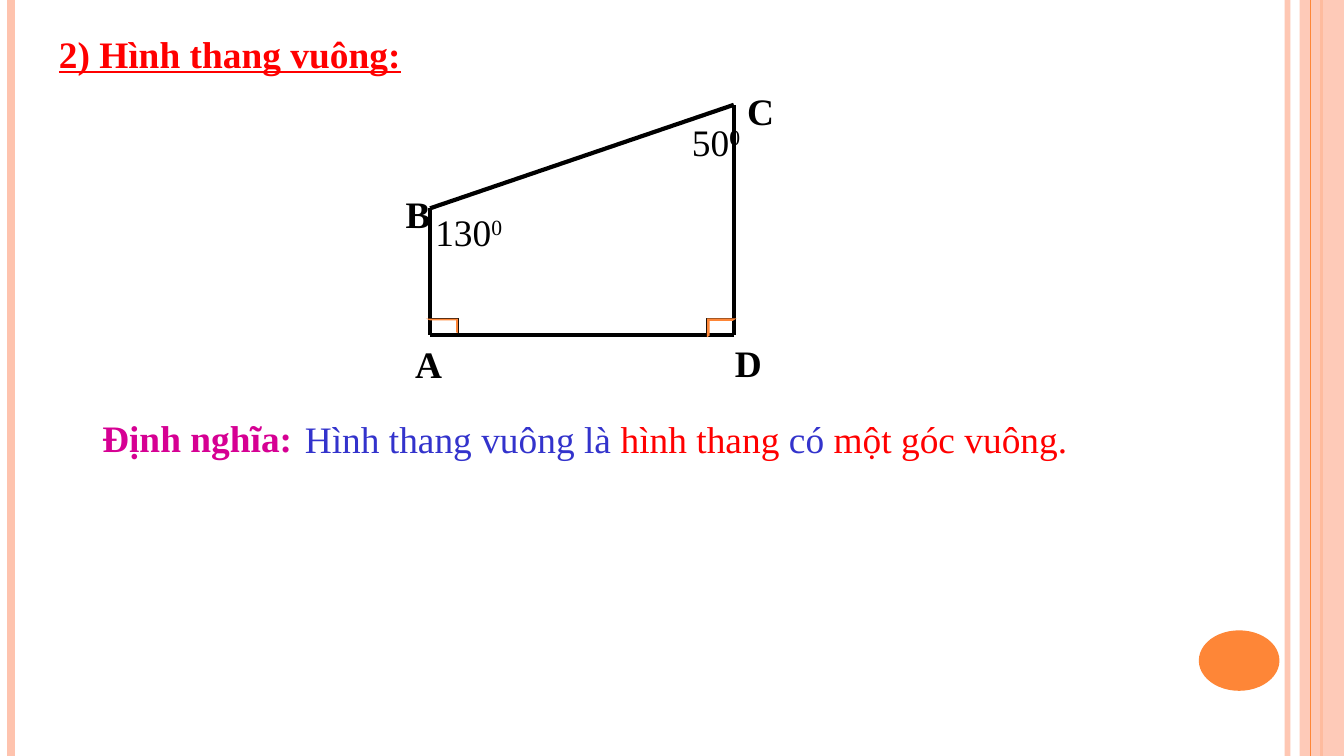
from dataclasses import dataclass, field
from lxml import etree
from pptx import Presentation
from pptx import util as u
from pptx.dml.color import RGBColor
from pptx.enum import shapes, text
from pptx.oxml import ns

FONT = "Times New Roman"
COLORS = {
    "black": "000000", "red": "FF0000", "blue": "3333CC", "magenta": "D60093",
    "orange": "FE8637", "peach": "FEC3AE",
}
WIDE = {"margin_left": u.Inches(0.1), "margin_right": u.Inches(0.1),
        "margin_top": u.Inches(0.05), "margin_bottom": u.Inches(0.05)}
TIGHT = {"margin_left": u.Inches(0.09), "margin_right": u.Inches(0.09),
         "margin_top": u.Inches(0.04), "margin_bottom": u.Inches(0.04)}


@dataclass
class Run:
    text: str
    color: str = "black"
    fmt: dict = field(default_factory=dict)
    superscript: bool = False


@dataclass
class Label:
    x: float
    y: float
    w: float
    h: float
    runs: list[Run]
    margins: dict = field(default_factory=lambda: WIDE)
    align: text.PP_ALIGN = text.PP_ALIGN.LEFT


@dataclass
class Line:
    start: tuple[float, float]
    end: tuple[float, float]
    color: str
    width: float
    alpha: int = 100


@dataclass
class Box:
    x: float
    y: float
    w: float
    h: float
    kind: shapes.MSO_SHAPE
    fill: str | None = None
    line: str | None = None
    alpha: int = 100
    adjust: tuple = ()
    flip: bool = False


def rgb(name: str) -> RGBColor:
    return RGBColor.from_string(COLORS[name])


def set_alpha(sp, percent: int) -> None:
    if percent < 100:
        clr = next(sp._element.spPr.iter(ns.qn("a:srgbClr")))
        etree.SubElement(clr, ns.qn("a:alpha"), val=str(percent * 1000))


def draw_line(s, line: Line) -> None:
    ends = [u.Inches(v) for v in (*line.start, *line.end)]
    c = s.shapes.add_connector(shapes.MSO_CONNECTOR.STRAIGHT, *ends)
    c.line.color.rgb = rgb(line.color)
    c.line.width = u.Pt(line.width)
    set_alpha(c, line.alpha)
    etree.SubElement(c._element.spPr, ns.qn("a:effectLst"))


def draw_box(s, box: Box) -> None:
    sp = s.shapes.add_shape(
        box.kind, *[u.Inches(v) for v in (box.x, box.y, box.w, box.h)])
    sp.shadow.inherit = False
    if box.fill:
        sp.fill.solid()
        sp.fill.fore_color.rgb = rgb(box.fill)
        set_alpha(sp, box.alpha)
    else:
        sp.fill.background()
    if box.line:
        sp.line.color.rgb = rgb(box.line)
        sp.line.width = u.Pt(0.75)
    else:
        sp.line.fill.background()
    for i, value in enumerate(box.adjust):
        sp.adjustments[i] = value
    if box.flip:
        sp._element.spPr.xfrm.set("flipH", "1")


def write_label(sp, label: Label) -> None:
    tf = sp.text_frame
    frame = {"word_wrap": True, "auto_size": text.MSO_AUTO_SIZE.NONE,
             "vertical_anchor": text.MSO_ANCHOR.TOP, **label.margins}
    for name, value in frame.items():
        setattr(tf, name, value)
    p = tf.paragraphs[0]
    p.alignment = label.align
    for run in label.runs:
        r = p.add_run()
        r.text = run.text
        r.font.color.rgb = rgb(run.color)
        for name, value in {"name": FONT, "size": u.Pt(20), **run.fmt}.items():
            setattr(r.font, name, value)
        if run.superscript:
            r._r.get_or_add_rPr().set("baseline", "30000")


def draw_label(s, label: Label) -> None:
    sp = s.shapes.add_textbox(
        *[u.Inches(v) for v in (label.x, label.y, label.w, label.h)])
    write_label(sp, label)


def place_title(s, label: Label) -> None:
    sp = s.shapes.title
    for name, value in zip(("left", "top", "width", "height"),
                           (label.x, label.y, label.w, label.h)):
        setattr(sp, name, u.Inches(value))
    write_label(sp, label)


def vertical(x: float, color: str, width: float, alpha: int = 100) -> Line:
    return Line((x, 0), (x, H), color, width, alpha)


def angle(x: float, y: float, degrees: str) -> Label:
    return Label(x, y, 0.71, 0.44, [Run(degrees), Run("0", superscript=True)])


W = 10
H = W * 9 / 16
BOLD = {"bold": True}
SHAPE = shapes.MSO_SHAPE

# Side bands and the page-number disc
DECOR = [
    vertical(9.58, "peach", 3, 93),
    vertical(0.08, "peach", 4.5),
    vertical(9.83, "orange", 1.5),
    Box(9.67, 0, 0.33, H, SHAPE.RECTANGLE, "peach", alpha=87),
    vertical(9.75, "orange", 0.75),
    Box(8.92, 4.69, 0.6, 0.45, SHAPE.OVAL, "orange"),
]

# Trapezoid corners and the places of their letters
CORNERS = {"A": (3.2, 2.49), "B": (3.2, 1.55), "C": (5.46, 0.78), "D": (5.46, 2.49)}
LETTERS = {"D": (5.37, 2.48), "C": (5.46, 0.61), "B": (2.92, 1.37), "A": (2.99, 2.49)}
SIDES = ["BA", "AD", "DC", "BC"]

RIGHT_ANGLES = [Box(x, 2.37, 0.21, 0.12, SHAPE.RECTANGLE, line="black")
                for x in (5.26, 3.2)]
FRAME_ADJUST = (0.134, 0.143)
CORNER_MARKS = [
    Box(5.26, 2.37, 0.22, 0.14, SHAPE.HALF_FRAME, "orange", adjust=FRAME_ADJUST),
    Box(3.17, 2.37, 0.24, 0.11, SHAPE.HALF_FRAME, "orange", adjust=FRAME_ADJUST,
        flip=True),
]

# Wording
TITLE = Label(-0.08, 0.19, 3.58, 0.43,
              [Run("2) Hình thang vuông:", "red", {"bold": True, "underline": True})],
              TIGHT, text.PP_ALIGN.CENTER)
ANGLES = [angle(3.14, 1.51, "130"), angle(5.05, 0.84, "50")]
DEFINITION = [
    Label(0.67, 3.05, 1.68, 0.43, [Run("Định nghĩa:", "magenta", BOLD)], TIGHT),
    Label(2.17, 3.05, 5.96, 0.44, [
        Run("Hình thang vuông là ", "blue"), Run("hình thang ", "red"),
        Run("có ", "blue"), Run("một góc vuông.", "red")]),
]


def main() -> None:
    prs = Presentation()
    prs.slide_width, prs.slide_height = u.Inches(W), u.Inches(H)
    s = prs.slides.add_slide(prs.slide_layouts[5])
    place_title(s, TITLE)

    for item in DECOR:
        (draw_line if isinstance(item, Line) else draw_box)(s, item)

    # Figure
    for start, end in SIDES:
        draw_line(s, Line(CORNERS[start], CORNERS[end], "black", 2.25))
    for box in RIGHT_ANGLES:
        draw_box(s, box)
    letters = [Label(x, y, 0.71, 0.44, [Run(name, fmt=BOLD)])
               for name, (x, y) in LETTERS.items()]
    for label in ANGLES + letters + DEFINITION:
        draw_label(s, label)
    for box in CORNER_MARKS:
        draw_box(s, box)

    prs.save("out.pptx")


if __name__ == "__main__":
    main()
